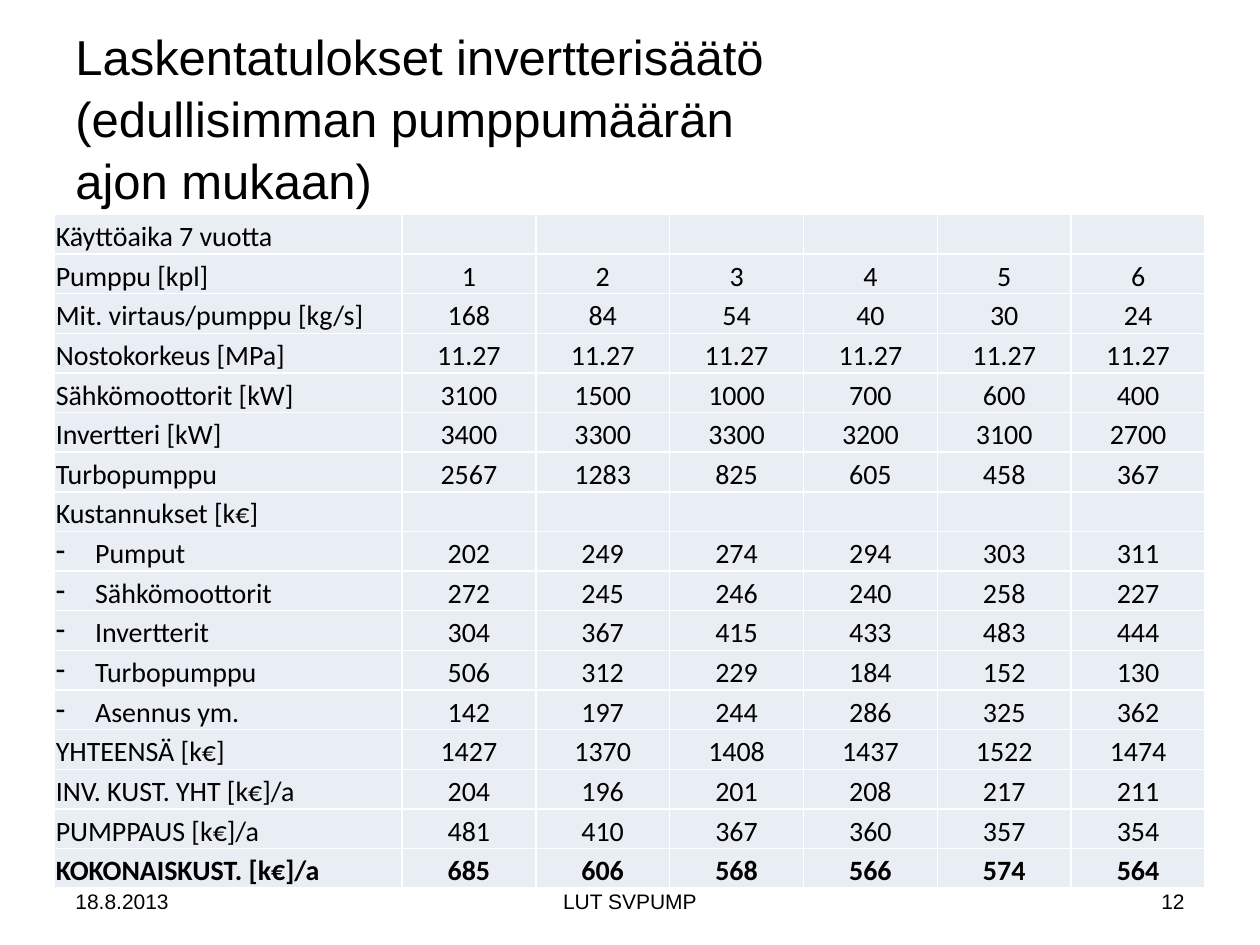
from lxml.etree import SubElement
from pptx import Presentation
from pptx.dml.color import RGBColor
from pptx.enum.text import MSO_ANCHOR, PP_ALIGN
from pptx.oxml.ns import qn
from pptx.util import Pt

BLACK = RGBColor(0x00, 0x00, 0x00)
WHITE = RGBColor(0xFF, 0xFF, 0xFF)
PALE = RGBColor(0xE9, 0xED, 0xF4)

# Content: a label starting with "- " is a bulleted cost item
TITLE = "Laskentatulokset invertterisäätö\v(edullisimman pumppumäärän \vajon mukaan)"
ROWS = [
    ("Käyttöaika 7 vuotta", ""),
    ("Pumppu [kpl]", "1 2 3 4 5 6"),
    ("Mit. virtaus/pumppu [kg/s]", "168 84 54 40 30 24"),
    ("Nostokorkeus [MPa]", "11.27 11.27 11.27 11.27 11.27 11.27"),
    ("Sähkömoottorit [kW]", "3100 1500 1000 700 600 400"),
    ("Invertteri [kW]", "3400 3300 3300 3200 3100 2700"),
    ("Turbopumppu", "2567 1283 825 605 458 367"),
    ("Kustannukset [k€]", ""),
    ("- Pumput", "202 249 274 294 303 311"),
    ("- Sähkömoottorit", "272 245 246 240 258 227"),
    ("- Invertterit", "304 367 415 433 483 444"),
    ("- Turbopumppu", "506 312 229 184 152 130"),
    ("- Asennus ym.", "142 197 244 286 325 362"),
    ("YHTEENSÄ [k€]", "1427 1370 1408 1437 1522 1474"),
    ("INV. KUST. YHT [k€]/a", "204 196 201 208 217 211"),
    ("PUMPPAUS [k€]/a", "481 410 367 360 357 354"),
    ("KOKONAISKUST. [k€]/a", "685 606 568 566 574 564"),
]
# Text, left, top, width, height, size, alignment, line spacing
TEXTS = [
    (TITLE, 36, 21.6, 648, 90, 28, PP_ALIGN.LEFT, 1.05),
    ("18.8.2013", 36, 500.4, 168, 28.8, 12, PP_ALIGN.LEFT, 1.0),
    ("LUT SVPUMP", 246, 500.4, 228, 28.8, 12, PP_ALIGN.CENTER, 1.0),
    ("12", 516, 500.4, 168, 28.8, 12, PP_ALIGN.RIGHT, 1.0),
]

# Table measures and formats
LEFT, TOP, HIGH = 31.2, 122.5, 22.66
WIDTHS = [198.5] + [76.5] * 6
INDENT = Pt(22.5)
CELL = {"margin_left": Pt(0.7), "margin_right": Pt(0.7), "margin_top": Pt(0.5),
        "margin_bottom": 0, "vertical_anchor": MSO_ANCHOR.BOTTOM}
FRAME = {"word_wrap": True, "vertical_anchor": MSO_ANCHOR.MIDDLE}


def apply(item, form):
    for name, value in form.items():
        setattr(item, name, value)


def style(para, face, size, bold=False):
    for run in para.runs:
        apply(run.font, {"name": face, "size": Pt(size), "bold": bold})
        run.font.color.rgb = BLACK


def border(cell):
    props = cell._tc.get_or_add_tcPr()
    for side in ("a:lnL", "a:lnR", "a:lnT", "a:lnB"):
        line = SubElement(props, qn(side), w=str(Pt(1)))
        fill = SubElement(line, qn("a:solidFill"))
        SubElement(fill, qn("a:srgbClr"), val=str(WHITE))


def bullet(para):
    props = para._p.get_or_add_pPr()
    props.set("marL", str(INDENT))
    props.set("indent", str(-INDENT))
    SubElement(props, qn("a:buChar"), char="-")


def fill_cell(cell, text, align, bold):
    apply(cell, CELL)
    border(cell)
    cell.fill.solid()
    cell.fill.fore_color.rgb = PALE
    para = cell.text_frame.paragraphs[0]
    para.alignment = align
    if text.startswith("- "):
        bullet(para)
    para.text = text.removeprefix("- ")
    style(para, "Calibri", 16, bold)


deck = Presentation()
apply(deck, {"slide_width": Pt(720), "slide_height": Pt(540)})
slide = deck.slides.add_slide(deck.slide_layouts[6])

# Title and footer
for text, x, y, wide, high, size, align, gap in TEXTS:
    frame = slide.shapes.add_textbox(Pt(x), Pt(y), Pt(wide), Pt(high)).text_frame
    apply(frame, FRAME)
    para = frame.paragraphs[0]
    para.text = text
    apply(para, {"alignment": align, "line_spacing": gap})
    style(para, "Arial", size)

# Results table
table = slide.shapes.add_table(
    len(ROWS), len(WIDTHS), Pt(LEFT), Pt(TOP),
    Pt(sum(WIDTHS)), Pt(HIGH * len(ROWS))).table
apply(table, {"first_row": False, "horz_banding": False})
for col, wide in zip(table.columns, WIDTHS):
    col.width = Pt(wide)
for row, (label, values) in zip(table.rows, ROWS):
    row.height = Pt(HIGH)
    texts = [label] + (values.split() or [""] * 6)
    for col, (cell, text) in enumerate(zip(row.cells, texts)):
        align = PP_ALIGN.CENTER if col else PP_ALIGN.LEFT
        fill_cell(cell, text, align, label == ROWS[-1][0])

deck.save("out.pptx")
